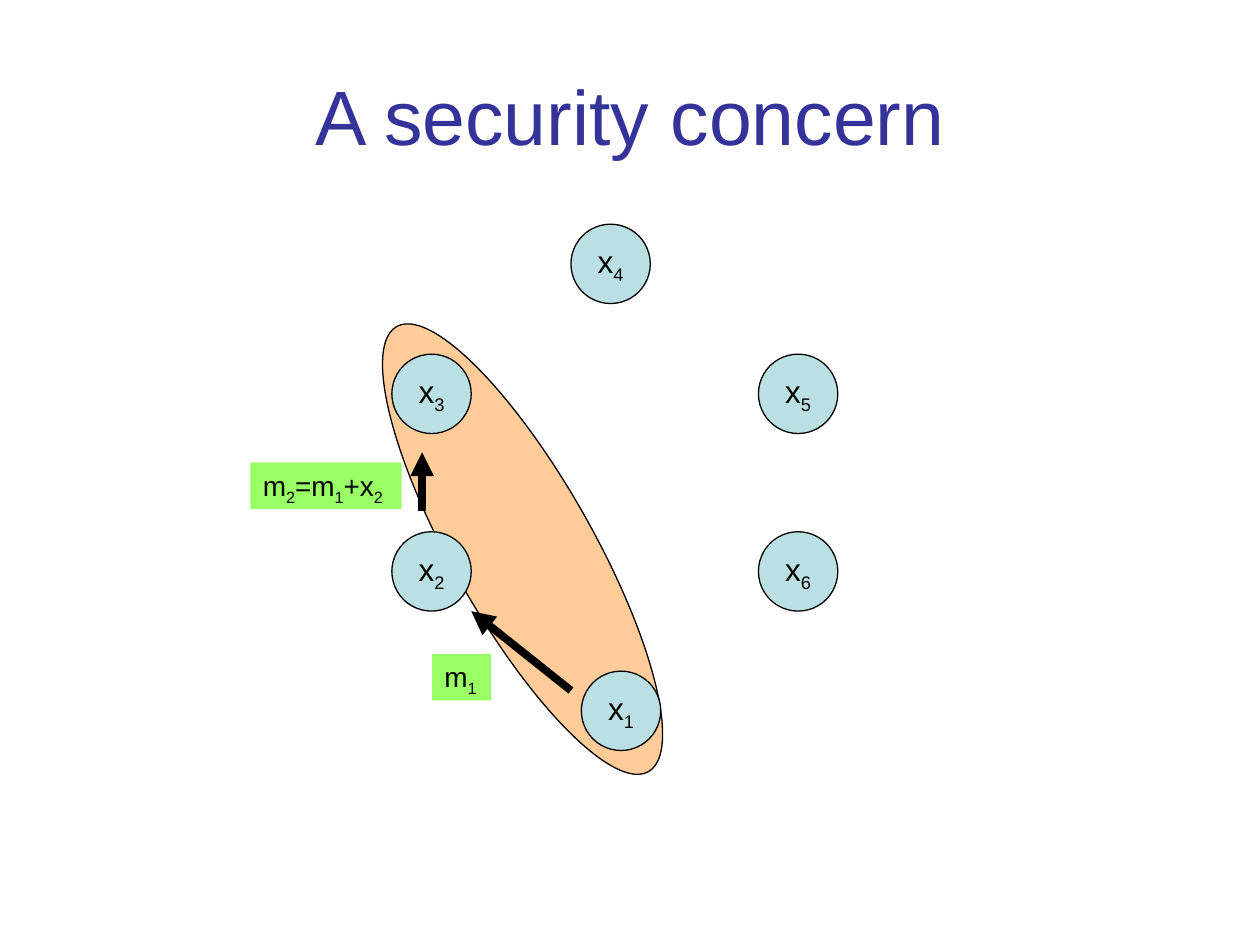
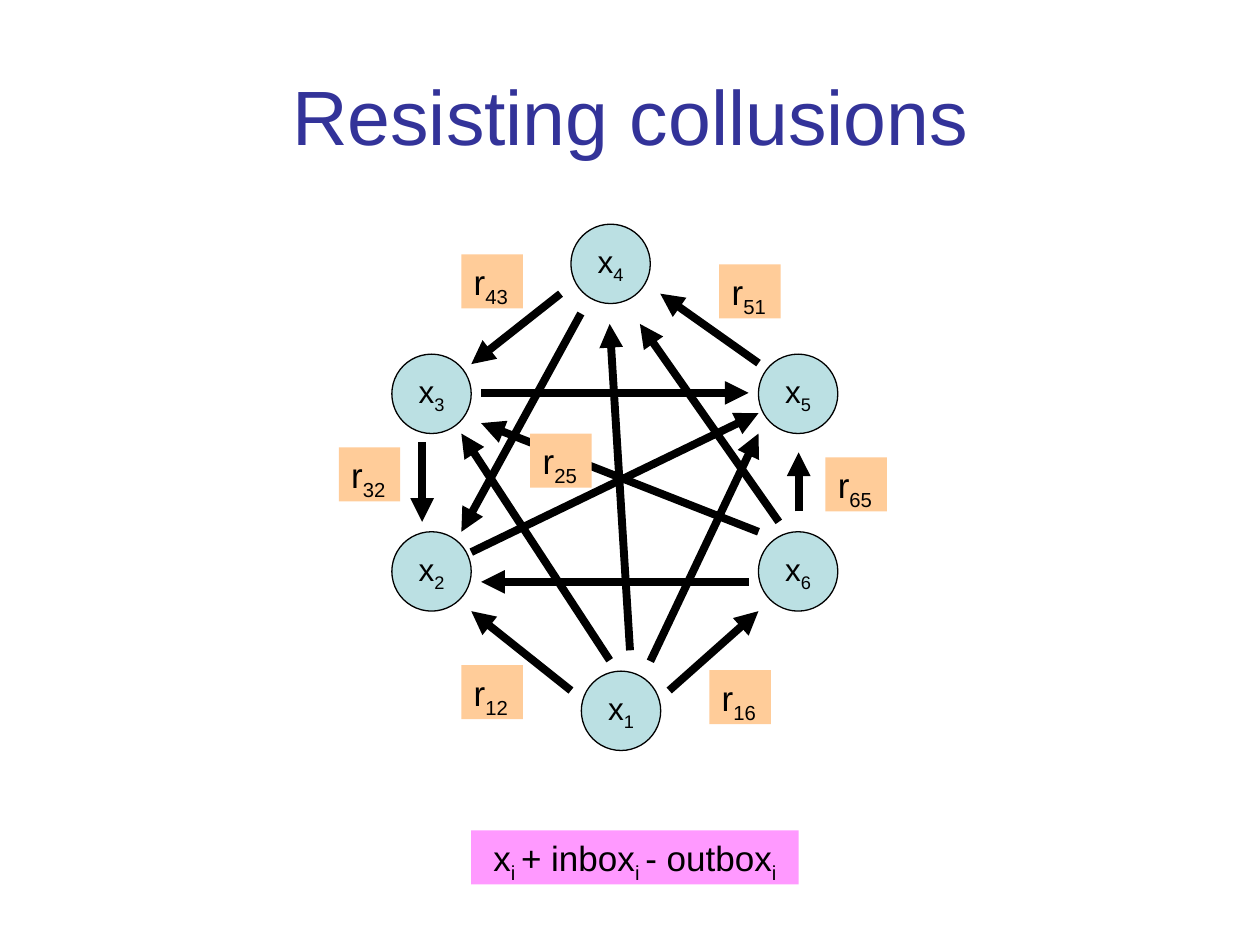
"""Build two slides on secure summation among six parties arranged in a ring."""
from lxml import etree
from pptx import Presentation
from pptx import util as u
from pptx.dml.color import RGBColor
from pptx.enum import shapes, text
from pptx.oxml import ns

FONT = "Arial"
BLACK, TITLE_BLUE, NODE_BLUE = "000000", "333399", "BBE0E3"
ORANGE, GREEN, PINK = "FFCC99", "99FF66", "FF99FF"

TITLE_BOX = (3.12, 1.12, 19.18, 2.39)
NODE_SIZE = 1.6
LEFT, RIGHT, UPPER, LOWER = 7.9, 15.29, 7.14, 10.72
NODES = {
    "x|1": (11.72, 13.53),
    "x|2": (LEFT, LOWER),
    "x|3": (LEFT, UPPER),
    "x|4": (11.51, 4.52),
    "x|5": (RIGHT, UPPER),
    "x|6": (RIGHT, LOWER),
}

COLLUDERS_BOX, COLLUDERS_ANGLE = (5.38, 9.65, 10.31, 2.84), 60.5
FIRST_MESSAGE = (11.51, 13.92, 9.5, 12.32)
SECOND_MESSAGE = (8.51, 10.31, 8.51, 9.12)
MESSAGE_LABELS = [
    ("m|1", (8.71, 13.18, 1.19, 0.94)),
    ("m|2|=m|1|+x|2", (5.05, 9.32, 3.05, 0.94)),
]

EXCHANGES = [
    FIRST_MESSAGE,
    (12.29, 13.31, 9.3, 8.74),
    (12.7, 13.11, 12.29, 6.53),
    (13.11, 13.33, 15.29, 8.74),
    (13.49, 13.92, 15.29, 12.32),
    (15.09, 11.73, 9.7, 11.73),
    (15.29, 10.72, 9.7, 8.53),
    (15.7, 10.52, 12.9, 6.53),
    (16.1, 10.31, 16.1, 9.12),
    (15.29, 7.32, 13.31, 5.92),
    (11.3, 5.92, 9.5, 7.34),
    (8.51, 8.92, 8.51, 10.52),
    (11.71, 6.32, 9.3, 10.72),
    (9.7, 7.92, 15.09, 7.92),
    (9.5, 11.13, 15.29, 8.33),
]
RANDOM_SIZE = (1.24, 1.09)
RANDOM_LABELS = {
    "r|43": (9.3, 5.13),
    "r|12": (9.3, 13.41),
    "r|16": (14.3, 13.51),
    "r|65": (16.64, 9.22),
    "r|51": (14.5, 5.33),
    "r|32": (6.83, 9.02),
    "r|25": (10.69, 8.74),
}
FORMULA = ("x|i |+ inbox|i |- outbox|i", (9.5, 16.74, 6.6, 1.09))


def color(hex_string):
    return RGBColor.from_string(hex_string)


def cm(lengths):
    return [u.Cm(length) for length in lengths]


def write(shape, content, size, ink=BLACK, centered=True, middle=True, wrap=True):
    frame = shape.text_frame
    frame.word_wrap = wrap
    frame.vertical_anchor = text.MSO_ANCHOR.MIDDLE if middle else text.MSO_ANCHOR.TOP
    paragraph = frame.paragraphs[0]
    paragraph.alignment = text.PP_ALIGN.CENTER if centered else text.PP_ALIGN.LEFT
    paragraph.font.name = FONT
    paragraph.font.size = u.Pt(size)
    paragraph.font.color.rgb = color(ink)
    for index, part in enumerate(content.split("|")):
        run = paragraph.add_run()
        run.text = part
        run.font.color.rgb = color(ink)
        if index % 2:
            run._r.get_or_add_rPr().set("baseline", "-25000")


def add_filled(slide, kind, box, fill, outlined=False):
    shape = slide.shapes.add_shape(kind, *cm(box))
    shape.shadow.inherit = False
    shape.fill.solid()
    shape.fill.fore_color.rgb = color(fill)
    if outlined:
        shape.line.color.rgb = color(BLACK)
        shape.line.width = u.Pt(0.75)
    else:
        shape.line.fill.background()
    return shape


def add_ellipse(slide, box, fill):
    return add_filled(slide, shapes.MSO_SHAPE.OVAL, box, fill, outlined=True)


def add_label(slide, content, box, fill, size, centered=False):
    label = add_filled(slide, shapes.MSO_SHAPE.RECTANGLE, box, fill)
    write(label, content, size, centered=centered, middle=False)


def add_nodes(slide):
    for name, corner in NODES.items():
        node = add_ellipse(slide, (*corner, NODE_SIZE, NODE_SIZE), NODE_BLUE)
        write(node, name, 18, wrap=False)


def add_arrow(slide, ends):
    arrow = slide.shapes.add_connector(shapes.MSO_CONNECTOR.STRAIGHT, *cm(ends))
    arrow.line.color.rgb = color(BLACK)
    arrow.line.width = u.Pt(4.5)
    etree.SubElement(arrow.line._get_or_add_ln(), ns.qn("a:tailEnd"), type="triangle")
    etree.SubElement(arrow._element.spPr, ns.qn("a:effectLst"))


def add_slide(presentation, title):
    slide = presentation.slides.add_slide(presentation.slide_layouts[6])
    write(slide.shapes.add_textbox(*cm(TITLE_BOX)), title, 44, TITLE_BLUE)
    return slide


def build_concern(presentation):
    slide = add_slide(presentation, "A security concern")
    add_ellipse(slide, COLLUDERS_BOX, ORANGE).rotation = COLLUDERS_ANGLE
    add_nodes(slide)
    for ends in (FIRST_MESSAGE, SECOND_MESSAGE):
        add_arrow(slide, ends)
    for content, box in MESSAGE_LABELS:
        add_label(slide, content, box, GREEN, 16)


def build_resistance(presentation):
    slide = add_slide(presentation, "Resisting collusions")
    add_nodes(slide)
    for ends in EXCHANGES:
        add_arrow(slide, ends)
    for content, corner in RANDOM_LABELS.items():
        add_label(slide, content, (*corner, *RANDOM_SIZE), ORANGE, 20)
    add_label(slide, *FORMULA, PINK, 20, centered=True)


def main():
    presentation = Presentation()
    presentation.slide_width, presentation.slide_height = cm((25.4, 19.05))
    build_concern(presentation)
    build_resistance(presentation)
    presentation.save("out.pptx")


if __name__ == "__main__":
    main()
